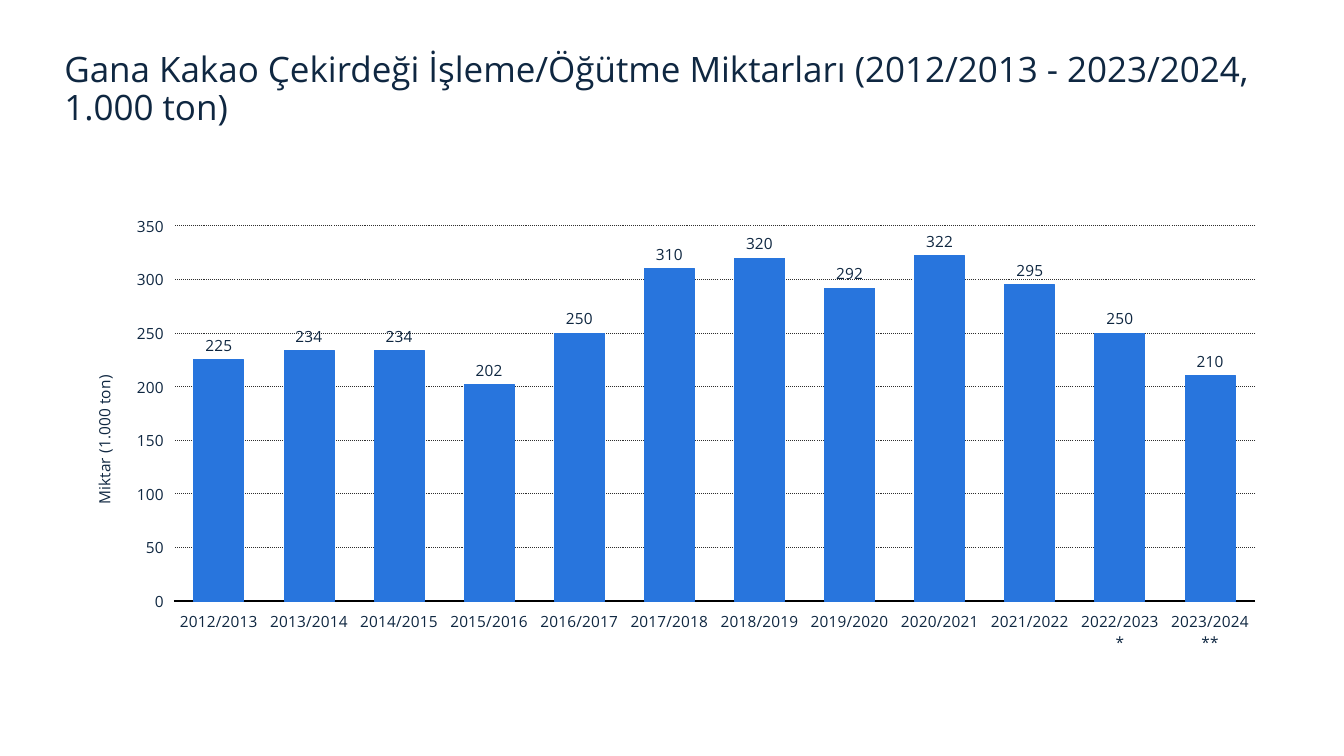
import pptx
import pptx.chart.data
import pptx.dml.color
import pptx.enum.chart
import pptx.enum.dml
import pptx.enum.text
import pptx.oxml
import pptx.oxml.ns
import pptx.util
from pptx.util import Inches

COLORS = {"text": "0F2741", "bar": "2875DD", "axis": "000000", "grid": "2F2F2F"}
FONT = "Open Sans"
LABEL_SIZE = 11
TITLE = "Gana Kakao Çekirdeği İşleme/Öğütme Miktarları (2012/2013 - 2023/2024, 1.000 ton)"
AXIS_TITLE = "Miktar (1.000 ton)"
NOTE_MARKS = {2022: "*", 2023: "**"}
AMOUNTS = [225, 234, 234, 202, 250, 310, 320, 292, 322, 295, 250, 210]
SEASONS = [f"{year}/{year + 1}{NOTE_MARKS.get(year, '')}" for year in range(2012, 2024)]


def color(name):
    return pptx.dml.color.RGBColor.from_string(COLORS[name])


def style_font(font, size):
    font.name = FONT
    font.size = pptx.util.Pt(size)
    font.bold = False
    font.color.rgb = color("text")


def style_line(line, name, width):
    line.color.rgb = color(name)
    line.width = pptx.util.Pt(width)


def set_layout(element, index, values):
    for layout in element.findall(pptx.oxml.ns.qn("c:layout")):
        element.remove(layout)
    settings = "".join(f'<c:{key} val="{value}"/>' for key, value in values.items())
    element.insert(index, pptx.oxml.parse_xml(
        f'<c:layout {pptx.oxml.ns.nsdecls("c")}><c:manualLayout>{settings}</c:manualLayout></c:layout>'))


def add_title(slide):
    text_box = slide.shapes.add_textbox(Inches(0.54), Inches(0.46), Inches(12.24), Inches(0.86))
    text_frame = text_box.text_frame
    text_frame.word_wrap = True
    text_frame.vertical_anchor = pptx.enum.text.MSO_ANCHOR.BOTTOM
    text_frame.text = TITLE
    paragraph = text_frame.paragraphs[0]
    paragraph.line_spacing = 0.9
    style_font(paragraph.runs[0].font, 25)


def style_axis(axis):
    axis.major_tick_mark = pptx.enum.chart.XL_TICK_MARK.NONE
    axis.minor_tick_mark = pptx.enum.chart.XL_TICK_MARK.NONE
    axis.tick_label_position = pptx.enum.chart.XL_TICK_LABEL_POSITION.LOW
    style_font(axis.tick_labels.font, LABEL_SIZE)


def style_value_axis(axis):
    style_axis(axis)
    axis.minimum_scale = 0
    axis.maximum_scale = 350
    axis.major_unit = 50
    axis.tick_labels.number_format = "#,##0"
    axis.tick_labels.number_format_is_linked = False
    axis.format.line.fill.background()
    gridline = axis.major_gridlines.format.line
    style_line(gridline, "grid", 0.75)
    gridline.dash_style = pptx.enum.dml.MSO_LINE.ROUND_DOT
    text_frame = axis.axis_title.text_frame
    text_frame.text = AXIS_TITLE
    style_font(text_frame.paragraphs[0].runs[0].font, LABEL_SIZE)
    set_layout(axis.axis_title._element, 1,
               {"xMode": "edge", "yMode": "edge", "x": 0.02, "y": 0.36})


def style_bars(plot):
    plot.gap_width = 80
    plot.overlap = -30
    plot.vary_by_categories = False
    series = plot.series[0]
    series.format.fill.solid()
    series.format.fill.fore_color.rgb = color("bar")
    style_line(series.format.line, "bar", 0.75)
    labels = series.data_labels
    labels.show_value = True
    labels.position = pptx.enum.chart.XL_LABEL_POSITION.OUTSIDE_END
    style_font(labels.font, LABEL_SIZE)


def add_chart(slide):
    chart_data = pptx.chart.data.CategoryChartData()
    chart_data.categories = SEASONS
    chart_data.add_series("Series 1", AMOUNTS)
    chart = slide.shapes.add_chart(
        pptx.enum.chart.XL_CHART_TYPE.COLUMN_CLUSTERED,
        Inches(0.64), Inches(2.06), Inches(12.05), Inches(4.54), chart_data).chart
    chart.has_legend = False
    chart.has_title = False
    style_font(chart.font, LABEL_SIZE)
    style_axis(chart.category_axis)
    style_line(chart.category_axis.format.line, "axis", 2)
    style_value_axis(chart.value_axis)
    style_bars(chart.plots[0])
    set_layout(chart._chartSpace.chart.plotArea, 0,
               {"layoutTarget": "inner", "xMode": "edge", "yMode": "edge",
                "x": 0.09, "y": 0.04, "w": 0.89, "h": 0.82})


def main():
    presentation = pptx.Presentation()
    presentation.slide_width = Inches(13.33)
    presentation.slide_height = Inches(7.5)
    slide = presentation.slides.add_slide(presentation.slide_layouts[6])
    add_chart(slide)
    add_title(slide)
    presentation.save("out.pptx")


if __name__ == "__main__":
    main()
